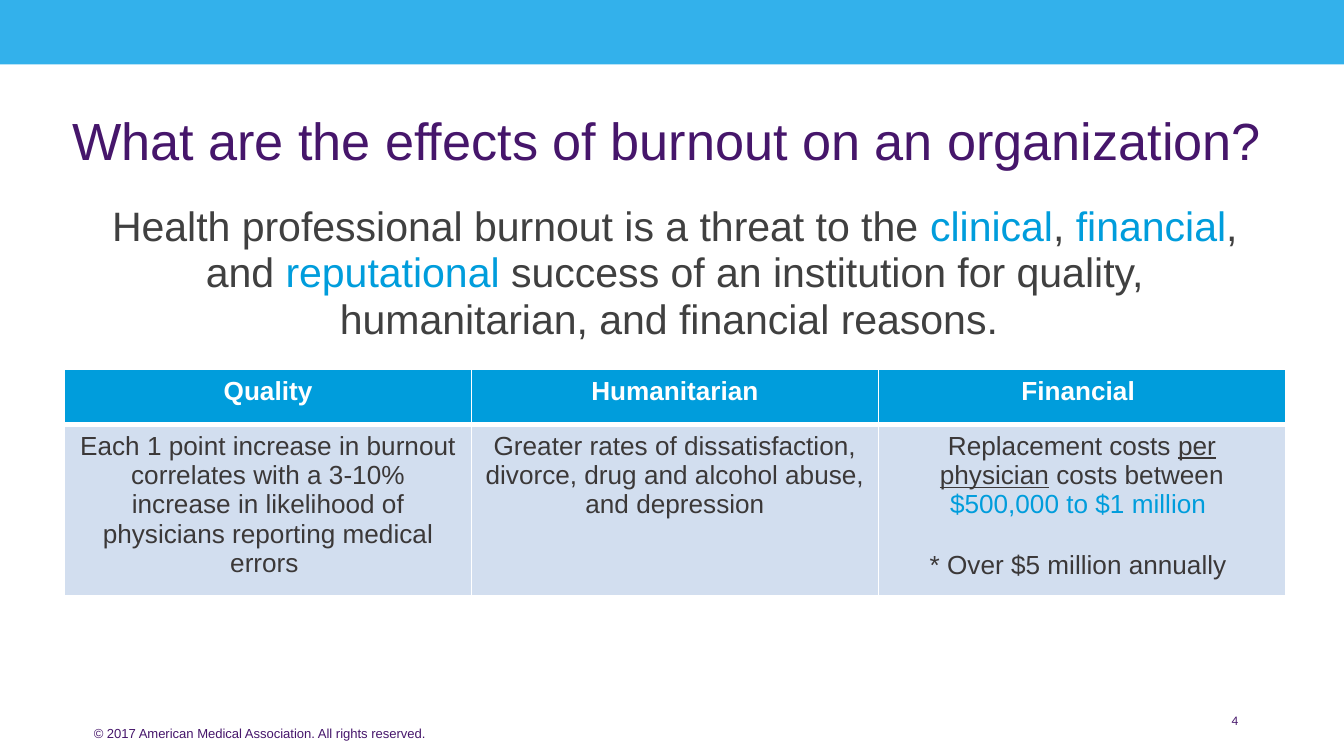
from lxml import etree
from pptx import Presentation
from pptx.dml.color import RGBColor
from pptx.enum.shapes import MSO_SHAPE as Shape
from pptx.enum.text import MSO_ANCHOR as Anchor, MSO_AUTO_SIZE as AutoSize, PP_ALIGN as Align
from pptx.oxml.ns import qn
from pptx.util import Pt

COLORS = {
    "band": "33B1EB",
    "purple": "46166B",
    "blue": "009DDC",
    "body": "404040",
    "cell": "3B3838",
    "pale": "D2DEEF",
    "white": "FFFFFF",
}
TITLE = "What are the effects of burnout on an organization?"
STATEMENT = [
    ("Health professional burnout is a threat to the ", "body"),
    ("clinical", "blue"),
    (", ", "body"),
    ("financial", "blue"),
    (", and ", "body"),
    ("reputational", "blue"),
    (" success of an institution for quality, humanitarian, and financial reasons. ", "body"),
]
HEADINGS = ["Quality", "Humanitarian", "Financial "]
EFFECTS = [
    [[("Each 1 point increase in burnout correlates with a 3-10% increase in "
       "likelihood of physicians reporting medical errors ", "cell")]],
    [[("Greater rates of dissatisfaction, divorce, drug and alcohol abuse, "
       "and depression", "cell")]],
    [[("Replacement costs ", "cell"),
      ("per physician", "cell", True),
      (" costs between ", "cell"),
      ("$500,000 to $1 million ", "blue")],
     [("* Over $5 million annually ", "cell")]],
]


def rgb(name):
    return RGBColor.from_string(COLORS[name])


def add_run(paragraph, text, color, size, font="Arial", bold=False, underline=False):
    run = paragraph.add_run()
    run.text = text
    run.font.name = font
    run.font.size = Pt(size)
    run.font.bold = bold
    run.font.underline = underline
    run.font.color.rgb = rgb(color)


def place(shape, box):
    shape.left, shape.top, shape.width, shape.height = [Pt(value) for value in box]


def add_text(slide, box, runs, size, font="Arial", align=Align.LEFT, anchor=Anchor.TOP):
    shape = slide.shapes.add_textbox(*[Pt(value) for value in box])
    frame = shape.text_frame
    frame.word_wrap = True
    frame.vertical_anchor = anchor
    paragraph = frame.paragraphs[0]
    paragraph.alignment = align
    for text, color in runs:
        add_run(paragraph, text, color, size, font)
    return paragraph


def add_band(slide, box):
    band = slide.shapes.add_shape(Shape.RECTANGLE, *[Pt(value) for value in box])
    band.shadow.inherit = False
    band.fill.solid()
    band.fill.fore_color.rgb = rgb("band")
    band.line.fill.background()


def add_title(slide, box):
    title = slide.shapes.title
    place(title, box)
    frame = title.text_frame
    frame.word_wrap = True
    frame.auto_size = AutoSize.NONE
    frame.vertical_anchor = Anchor.MIDDLE
    paragraph = frame.paragraphs[0]
    paragraph.alignment = Align.CENTER
    paragraph.line_spacing = 0.9
    add_run(paragraph, TITLE, "purple", 28)


def add_statement(slide, box):
    paragraph = add_text(slide, box, STATEMENT, 22, align=Align.CENTER)
    paragraph.line_spacing = 0.94


def style_cell(cell, fill, bottom_width):
    cell.fill.solid()
    cell.fill.fore_color.rgb = rgb(fill)
    properties = cell._tc.get_or_add_tcPr()
    widths = {"a:lnL": 1, "a:lnR": 1, "a:lnT": 1, "a:lnB": bottom_width}
    for index, (tag, width) in enumerate(widths.items()):
        line = etree.Element(qn(tag), w=str(Pt(width)))
        solid = etree.SubElement(line, qn("a:solidFill"))
        etree.SubElement(solid, qn("a:srgbClr"), val=COLORS["white"])
        properties.insert(index, line)


def add_effects_table(slide, box):
    left, top, width, height = [Pt(value) for value in box]
    table = slide.shapes.add_table(2, len(HEADINGS), left, top, width, height).table
    table.rows[0].height = Pt(29.5)
    table.rows[1].height = height - Pt(29.5)
    for column, (heading, paragraphs) in enumerate(zip(HEADINGS, EFFECTS)):
        header = table.cell(0, column)
        style_cell(header, "blue", 3)
        paragraph = header.text_frame.paragraphs[0]
        paragraph.alignment = Align.CENTER
        add_run(paragraph, heading, "white", 14, bold=True)

        cell = table.cell(1, column)
        style_cell(cell, "pale", 1)
        frame = cell.text_frame
        for index, runs in enumerate(paragraphs):
            paragraph = frame.add_paragraph() if index else frame.paragraphs[0]
            paragraph.alignment = Align.CENTER
            if index:
                paragraph.space_before = Pt(17)
            for text, color, *underline in runs:
                add_run(paragraph, text, color, 14, underline=bool(underline))


def add_footer(slide, copyright_box, number_box):
    add_text(slide, copyright_box,
             [("© 2017 American Medical Association. All rights reserved.", "purple")], 7)
    add_text(slide, number_box, [("4", "purple")], 7, "Calibri", Align.RIGHT, Anchor.MIDDLE)


def main():
    presentation = Presentation()
    presentation.slide_width = Pt(720)
    presentation.slide_height = Pt(405)
    slide = presentation.slides.add_slide(presentation.slide_layouts[5])
    add_band(slide, (0, 0, 720, 34.5))
    add_title(slide, (26, 35, 662, 83.5))
    add_statement(slide, (48, 106, 627, 245.5))
    add_effects_table(slide, (34.6, 198, 654, 116.5))
    add_footer(slide, (43.2, 385.2, 269.3, 25.2), (508.3, 375.1, 162, 21.6))
    presentation.save("out.pptx")


if __name__ == "__main__":
    main()
